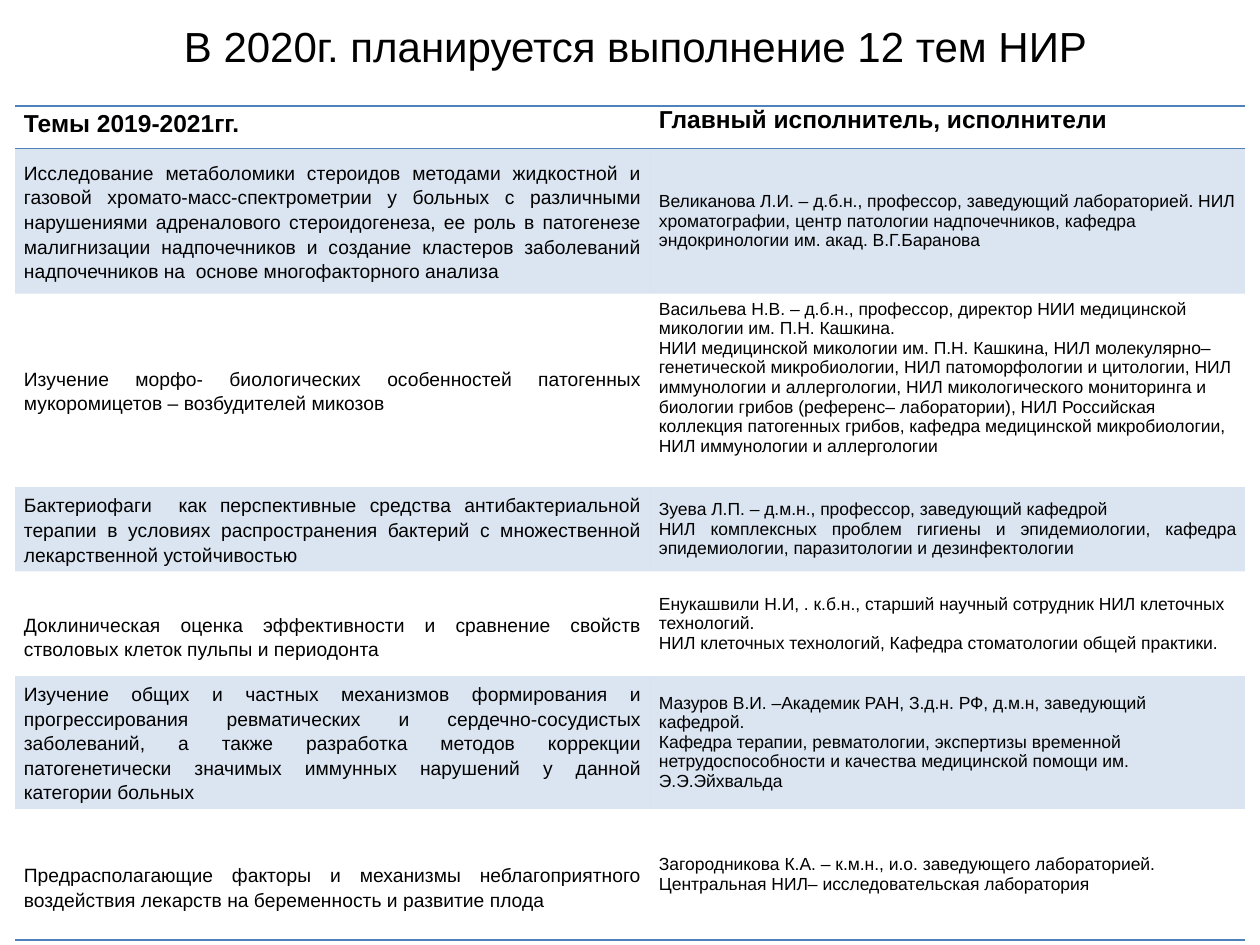
from lxml import etree
from pptx import Presentation, util as u
from pptx.dml.color import RGBColor
from pptx.enum import text
from pptx.oxml import ns

BLACK = RGBColor(0x00, 0x00, 0x00)
BLUE = RGBColor(0x4F, 0x81, 0xBD)
FONT = "Arial"
NO_STYLE = "{2D5ABB26-0587-4C30-8999-92F81FD0307C}"
LEFT, JUSTIFY = text.PP_ALIGN.LEFT, text.PP_ALIGN.JUSTIFY

COLUMN_WIDTHS = [5.04, 4.72]
ROW_HEIGHTS = [0.34, 1.15, 1.44, 0.67, 0.83, 1.04, 1.04]
SIDE_MARGIN, LINE_MARGIN = 0.07, 0.2

HEADERS = ["Темы 2019-2021гг.", "Главный исполнитель, исполнители"]
TOPICS = [
    ("Исследование метаболомики стероидов методами жидкостной и газовой хромато-масс-спектрометрии у больных с различными нарушениями адреналового стероидогенеза, ее роль в патогенезе малигнизации надпочечников и создание кластеров заболеваний надпочечников на  основе многофакторного анализа",
     ["Великанова Л.И. – д.б.н., профессор, заведующий лабораторией. НИЛ хроматографии, центр патологии надпочечников, кафедра эндокринологии им. акад. В.Г.Баранова"]),
    ("Изучение морфо- биологических особенностей патогенных мукоромицетов – возбудителей микозов",
     ["Васильева Н.В. – д.б.н., профессор, директор НИИ медицинской микологии им. П.Н. Кашкина.",
      "НИИ медицинской микологии им. П.Н. Кашкина, НИЛ молекулярно– генетической микробиологии, НИЛ патоморфологии и цитологии, НИЛ иммунологии и аллергологии, НИЛ микологического мониторинга и биологии грибов (референс– лаборатории), НИЛ Российская коллекция патогенных грибов, кафедра медицинской микробиологии, НИЛ иммунологии и аллергологии"]),
    ("Бактериофаги  как перспективные средства антибактериальной терапии в условиях распространения бактерий с множественной лекарственной устойчивостью",
     ["Зуева Л.П. – д.м.н., профессор, заведующий кафедрой",
      "НИЛ комплексных проблем гигиены и эпидемиологии, кафедра эпидемиологии, паразитологии и дезинфектологии"]),
    ("Доклиническая оценка эффективности и сравнение свойств стволовых клеток пульпы и периодонта",
     ["Енукашвили Н.И, . к.б.н., старший научный сотрудник НИЛ клеточных технологий.",
      "НИЛ клеточных технологий, Кафедра стоматологии общей практики."]),
    ("Изучение общих и частных механизмов формирования и прогрессирования ревматических и сердечно-сосудистых заболеваний, а также разработка методов коррекции патогенетически значимых иммунных нарушений у данной категории больных",
     ["Мазуров В.И. –Академик РАН, З.д.н. РФ, д.м.н, заведующий кафедрой.",
      "Кафедра терапии, ревматологии, экспертизы временной нетрудоспособности и качества медицинской помощи им. Э.Э.Эйхвальда"]),
    ("Предрасполагающие факторы и механизмы неблагоприятного воздействия лекарств на беременность и развитие плода",
     ["Загородникова К.А. – к.м.н., и.о. заведующего лабораторией. Центральная НИЛ– исследовательская лаборатория"]),
]


def write(frame, lines, size, align, spacing=1.0, bold=False):
    frame.word_wrap = True
    for index, line in enumerate(lines):
        para = frame.add_paragraph() if index else frame.paragraphs[0]
        para.alignment, para.line_spacing = align, spacing
        span = para.add_run()
        span.text = line
        span.font.name, span.font.size = FONT, u.Pt(size)
        span.font.bold, span.font.color.rgb = bold, BLACK


def add_borders(cell, sides):
    for position, side in enumerate(sides):
        line = etree.Element(ns.qn(f"a:ln{side}"), w=str(u.Pt(1)))
        fill = etree.SubElement(line, ns.qn("a:solidFill"))
        etree.SubElement(fill, ns.qn("a:srgbClr"), val=str(BLUE))
        cell._tc.get_or_add_tcPr().insert(position, line)


deck = Presentation()
deck.slide_width, deck.slide_height = u.Inches(10), u.Inches(7.5)
page = deck.slides.add_slide(deck.slide_layouts[6])

# Title
box = page.shapes.add_textbox(u.Inches(0.51), u.Inches(0.13), u.Inches(9.07), u.Inches(0.46))
box.text_frame.vertical_anchor = text.MSO_ANCHOR.MIDDLE
write(box.text_frame, ["В 2020г. планируется выполнение 12 тем НИР"], 24, text.PP_ALIGN.CENTER)

# Table grid
table = page.shapes.add_table(
    len(ROW_HEIGHTS), len(COLUMN_WIDTHS), u.Inches(0.12), u.Inches(0.84),
    u.Inches(sum(COLUMN_WIDTHS)), u.Inches(sum(ROW_HEIGHTS))).table
table.first_row = table.horz_banding = False
table._tbl.tblPr.find(ns.qn("a:tableStyleId")).text = NO_STYLE
for column, width in zip(table.columns, COLUMN_WIDTHS):
    column.width = u.Inches(width)
for row, height in zip(table.rows, ROW_HEIGHTS):
    row.height = u.Inches(height)

# Banding, margins and rules
for number, row in enumerate(table.rows):
    for cell in row.cells:
        cell.margin_left = cell.margin_right = u.Inches(SIDE_MARGIN)
        cell.margin_top = cell.margin_bottom = 0
        cell.vertical_anchor = text.MSO_ANCHOR.MIDDLE if number else text.MSO_ANCHOR.TOP
        if number % 2:
            cell.fill.solid()
            cell.fill.fore_color.rgb = BLUE
            color = cell._tc.tcPr.find(".//" + ns.qn("a:srgbClr"))
            etree.SubElement(color, ns.qn("a:alpha"), val="20000")
        else:
            cell.fill.background()
        if number == 0:
            add_borders(cell, "TB")
        elif number == len(TOPICS):
            add_borders(cell, "B")

# Header row
for column, header in enumerate(HEADERS):
    write(table.cell(0, column).text_frame, [header], 14, JUSTIFY, 1.0 if column else 1.15, True)
table.cell(0, 0).text_frame.paragraphs[0].space_after = u.Pt(6)

# Topics and the people responsible
for number, (topic, people) in enumerate(TOPICS, 1):
    write(table.cell(number, 0).text_frame, [topic], 11, JUSTIFY, 1.15)
    write(table.cell(number, 1).text_frame, people, 10, JUSTIFY if number == 3 else LEFT)

# Cells whose text sits off the middle by half a line
table.cell(2, 1).margin_bottom = u.Inches(LINE_MARGIN)
for number in (4, 6):
    table.cell(number, 0).margin_top = u.Inches(LINE_MARGIN)

deck.save("out.pptx")
